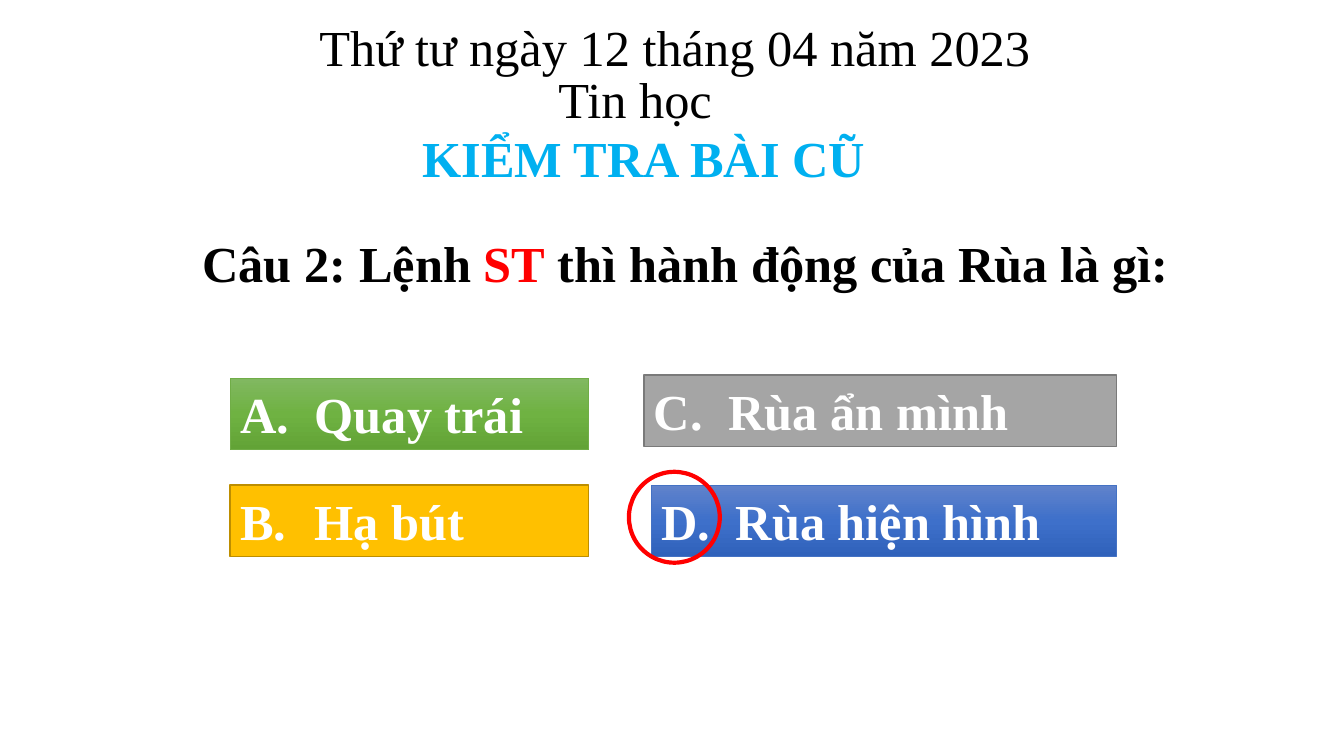
from copy import deepcopy

from lxml.etree import SubElement
from pptx import Presentation
from pptx.dml.color import RGBColor
from pptx.enum.shapes import MSO_SHAPE
from pptx.enum.text import MSO_ANCHOR, PP_ALIGN
from pptx.oxml.ns import qn
from pptx.util import Cm, Pt

BLACK = RGBColor(0x00, 0x00, 0x00)
WHITE = RGBColor(0xFF, 0xFF, 0xFF)
RED = RGBColor(0xFF, 0x00, 0x00)
SKY = RGBColor(0x00, 0xB0, 0xF0)
GREEN = RGBColor(0x70, 0xAD, 0x47)
GREEN_SHADES = [RGBColor(0x81, 0xB8, 0x61), RGBColor(0x6F, 0xB2, 0x42), RGBColor(0x62, 0xA3, 0x36)]
GOLD = RGBColor(0xFF, 0xC0, 0x00)
DARK_GOLD = RGBColor(0xBD, 0x8E, 0x00)
GRAY = RGBColor(0xA5, 0xA5, 0xA5)
DARK_GRAY = RGBColor(0x7A, 0x7A, 0x7A)
BLUE = RGBColor(0x44, 0x72, 0xC4)
BLUE_SHADES = [RGBColor(0x61, 0x83, 0xCB), RGBColor(0x3E, 0x70, 0xCA), RGBColor(0x30, 0x62, 0xBB)]
ROW_HEIGHT = Cm(1.8)


def write_line(shape, parts, bold):
    frame = shape.text_frame
    frame.word_wrap = True
    frame.vertical_anchor = MSO_ANCHOR.TOP
    paragraph = frame.paragraphs[0]
    paragraph.alignment = PP_ALIGN.LEFT
    for text, color in parts:
        run = paragraph.add_run()
        run.text = text
        run.font.name = "Times New Roman"
        run.font.size = Pt(36)
        run.font.bold = bold
        run.font.color.rgb = color


def fill_gradient(shape, shades):
    shape.fill.gradient()
    shape.fill.gradient_angle = 270
    stops = shape.fill._xPr.find(qn("a:gradFill")).find(qn("a:gsLst"))
    stops.insert(1, deepcopy(stops[0]))
    for stop, position, shade in zip(shape.fill.gradient_stops, (0, 0.5, 1), shades):
        stop.position = position
        stop.color.rgb = shade


presentation = Presentation()
presentation.slide_width = Cm(33.87)
presentation.slide_height = Cm(19.05)
slide = presentation.slides.add_slide(presentation.slide_layouts[5])

title = slide.shapes.title
title.left, title.top, title.width, title.height = Cm(10.39), Cm(3.07), Cm(12.01), ROW_HEIGHT
write_line(title, [("KIỂM TRA BÀI CŨ", SKY)], True)

question = [("Câu 2: Lệnh ", BLACK), ("ST", RED), (" thì hành động của Rùa là gì:", BLACK)]
text_lines = [
    (7.8, 0.28, 20.8, [("Thứ tư ngày 12 tháng 04 năm 2023", BLACK)], False),
    (13.82, 1.6, 6.35, [("Tin học", BLACK)], False),
    (4.85, 5.72, 29.02, question, True),
]
for left, top, width, parts, bold in text_lines:
    box = slide.shapes.add_textbox(Cm(left), Cm(top), Cm(width), ROW_HEIGHT)
    write_line(box, parts, bold)

answers = [
    ("A.\tQuay trái", 5.8, 9.53, 9.04, GREEN_SHADES, GREEN, 0.5),
    ("B.\tHạ bút", 5.8, 12.22, 9.04, [GOLD], DARK_GOLD, 1),
    ("C.\tRùa ẩn mình", 16.23, 9.45, 11.91, [GRAY], DARK_GRAY, 1),
    ("D.\tRùa hiện hình", 16.41, 12.22, 11.73, BLUE_SHADES, BLUE, 0.5),
]
for text, left, top, width, shades, line_color, line_width in answers:
    answer = slide.shapes.add_shape(MSO_SHAPE.RECTANGLE, Cm(left), Cm(top), Cm(width), ROW_HEIGHT)
    answer.shadow.inherit = False
    if len(shades) > 1:
        fill_gradient(answer, shades)
    else:
        answer.fill.solid()
        answer.fill.fore_color.rgb = shades[0]
    answer.line.color.rgb = line_color
    answer.line.width = Pt(line_width)
    properties = answer.text_frame.paragraphs[0]._p.get_or_add_pPr()
    tabs = SubElement(properties, qn("a:tabLst"))
    SubElement(tabs, qn("a:tab"), pos=str(Cm(1.88)), algn="l")
    write_line(answer, [(text, WHITE)], True)

circle = slide.shapes.add_shape(MSO_SHAPE.OVAL, Cm(15.85), Cm(11.89), Cm(2.29), Cm(2.29))
circle.shadow.inherit = False
circle.fill.background()
circle.line.color.rgb = RED
circle.line.width = Pt(3)

presentation.save("out.pptx")
